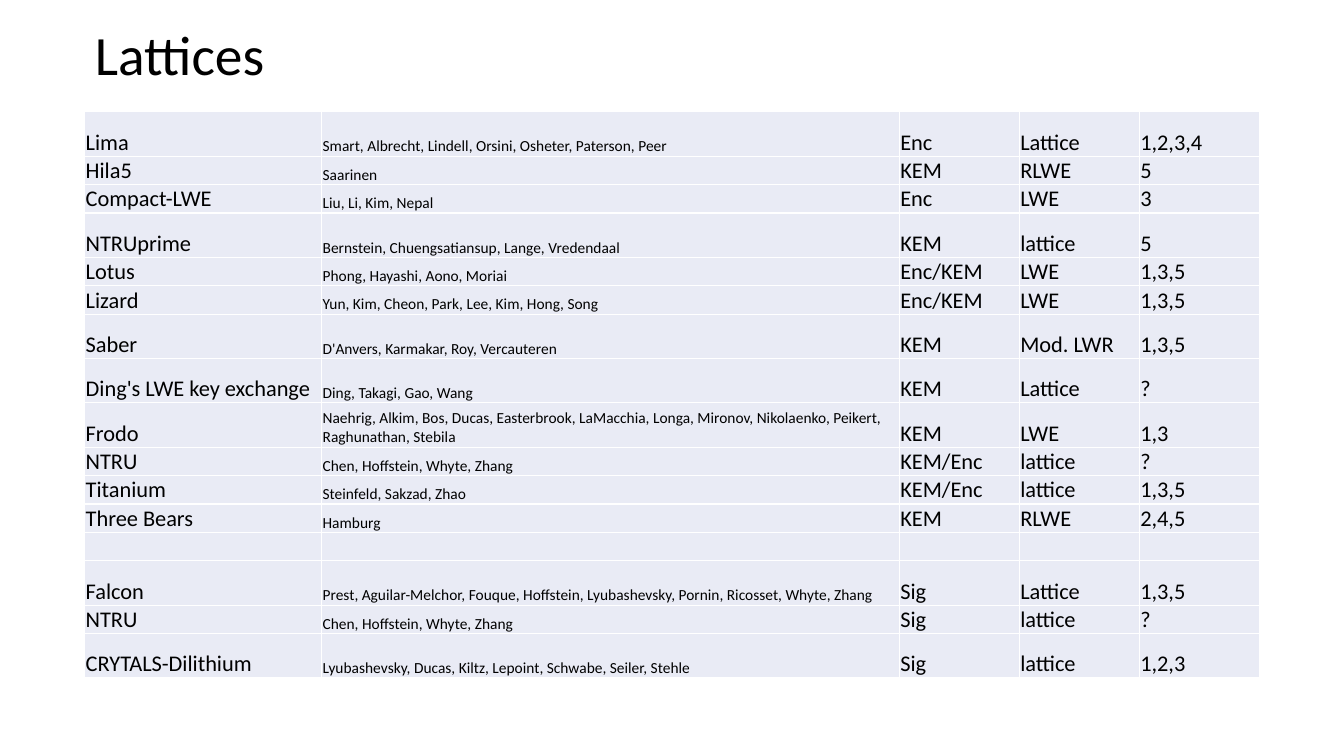
"""Build the slide that lists the lattice schemes."""
import pptx
import pptx.util
import pptx.dml.color
import pptx.enum.text
import pptx.oxml.ns
import lxml.etree

Inches = pptx.util.Inches
Pt = pptx.util.Pt
Anchor = pptx.enum.text.MSO_ANCHOR

COLORS = {"text": "000000", "cell": "E9EBF5", "rule": "FFFFFF"}
FONT = "Calibri"
TITLE = "Lattices"
TALL, SHORT = 0.44, 0.28
COLS = [2.35, 5.73, 1.19, 1.19, 1.19]
SIZES = [16, 11, 16, 16, 16]
ROWS = [
    (TALL, "Lima", "Smart, Albrecht, Lindell, Orsini, Osheter, Paterson, Peer", "Enc", "Lattice", "1,2,3,4"),
    (SHORT, "Hila5", "Saarinen", "KEM", "RLWE", "5"),
    (SHORT, "Compact-LWE", "Liu, Li, Kim, Nepal", "Enc", "LWE", "3"),
    (TALL, "NTRUprime", "Bernstein, Chuengsatiansup, Lange, Vredendaal", "KEM", "lattice", "5"),
    (SHORT, "Lotus", "Phong, Hayashi, Aono, Moriai", "Enc/KEM", "LWE", "1,3,5"),
    (SHORT, "Lizard", "Yun, Kim, Cheon, Park, Lee, Kim, Hong, Song", "Enc/KEM", "LWE", "1,3,5"),
    (TALL, "Saber", "D'Anvers, Karmakar, Roy, Vercauteren", "KEM", "Mod. LWR", "1,3,5"),
    (TALL, "Ding's LWE key exchange", "Ding, Takagi, Gao, Wang", "KEM", "Lattice", "?"),
    (TALL, "Frodo", "Naehrig, Alkim, Bos, Ducas, Easterbrook, LaMacchia, Longa, Mironov, "
     "Nikolaenko, Peikert, Raghunathan, Stebila", "KEM", "LWE", "1,3"),
    (SHORT, "NTRU", "Chen, Hoffstein, Whyte, Zhang", "KEM/Enc", "lattice", "?"),
    (SHORT, "Titanium", "Steinfeld, Sakzad, Zhao", "KEM/Enc", "lattice", "1,3,5"),
    (SHORT, "Three Bears", "Hamburg", "KEM", "RLWE", "2,4,5"),
    (SHORT, "", "", "", "", ""),
    (TALL, "Falcon", "Prest, Aguilar-Melchor, Fouque, Hoffstein, Lyubashevsky, Pornin, "
     "Ricosset, Whyte, Zhang", "Sig", "Lattice", "1,3,5"),
    (SHORT, "NTRU", "Chen, Hoffstein, Whyte, Zhang", "Sig", "lattice", "?"),
    (TALL, "CRYTALS-Dilithium", "Lyubashevsky, Ducas, Kiltz, Lepoint, Schwabe, Seiler, Stehle",
     "Sig", "lattice", "1,2,3"),
]


def color(name):
    return pptx.dml.color.RGBColor.from_string(COLORS[name])


def add_run(para, text, size):
    run = para.add_run()
    run.text = text
    run.font.size = Pt(size)
    run.font.name = FONT
    run.font.color.rgb = color("text")


def add_rules(cell):
    props = cell._tc.get_or_add_tcPr()
    qn = pptx.oxml.ns.qn
    for side in ("lnL", "lnR", "lnT", "lnB"):
        line = lxml.etree.SubElement(props, qn("a:" + side), w=str(Pt(1)))
        fill = lxml.etree.SubElement(line, qn("a:solidFill"))
        lxml.etree.SubElement(fill, qn("a:srgbClr"), val=COLORS["rule"])


def fill_cell(cell, text, size):
    cell.margin_left = cell.margin_right = cell.margin_top = Inches(0.01)
    cell.margin_bottom = 0
    cell.vertical_anchor = Anchor.BOTTOM
    add_rules(cell)
    cell.fill.solid()
    cell.fill.fore_color.rgb = color("cell")
    para = cell.text_frame.paragraphs[0]
    if text:
        add_run(para, text, size)
    else:
        lxml.etree.SubElement(para._p, pptx.oxml.ns.qn("a:endParaRPr"), sz=str(size * 100))


def add_title(slide):
    title = slide.shapes.title
    title.left, title.top = Inches(0.84), Inches(0.21)
    title.width, title.height = Inches(11.5), Inches(0.72)
    frame = title.text_frame
    frame.word_wrap = True
    frame.vertical_anchor = Anchor.MIDDLE
    para = frame.paragraphs[0]
    para.alignment = pptx.enum.text.PP_ALIGN.LEFT
    para.line_spacing = 0.9
    add_run(para, TITLE, 39.6)


def add_schemes(slide):
    high = sum(row[0] for row in ROWS)
    frame = slide.shapes.add_table(len(ROWS), len(COLS), Inches(0.84), Inches(1.11),
                                   Inches(sum(COLS)), Inches(high))
    table = frame.table
    table.first_row = table.horz_banding = False
    for col, width in zip(table.columns, COLS):
        col.width = Inches(width)
    for row, (height, *texts) in zip(table.rows, ROWS):
        row.height = Inches(height)
        for cell, text, size in zip(row.cells, texts, SIZES):
            fill_cell(cell, text, size)


def main():
    deck = pptx.Presentation()
    deck.slide_width, deck.slide_height = Inches(13.33), Inches(7.5)
    slide = deck.slides.add_slide(deck.slide_layouts[5])
    add_title(slide)
    add_schemes(slide)
    deck.save("out.pptx")


if __name__ == "__main__":
    main()
